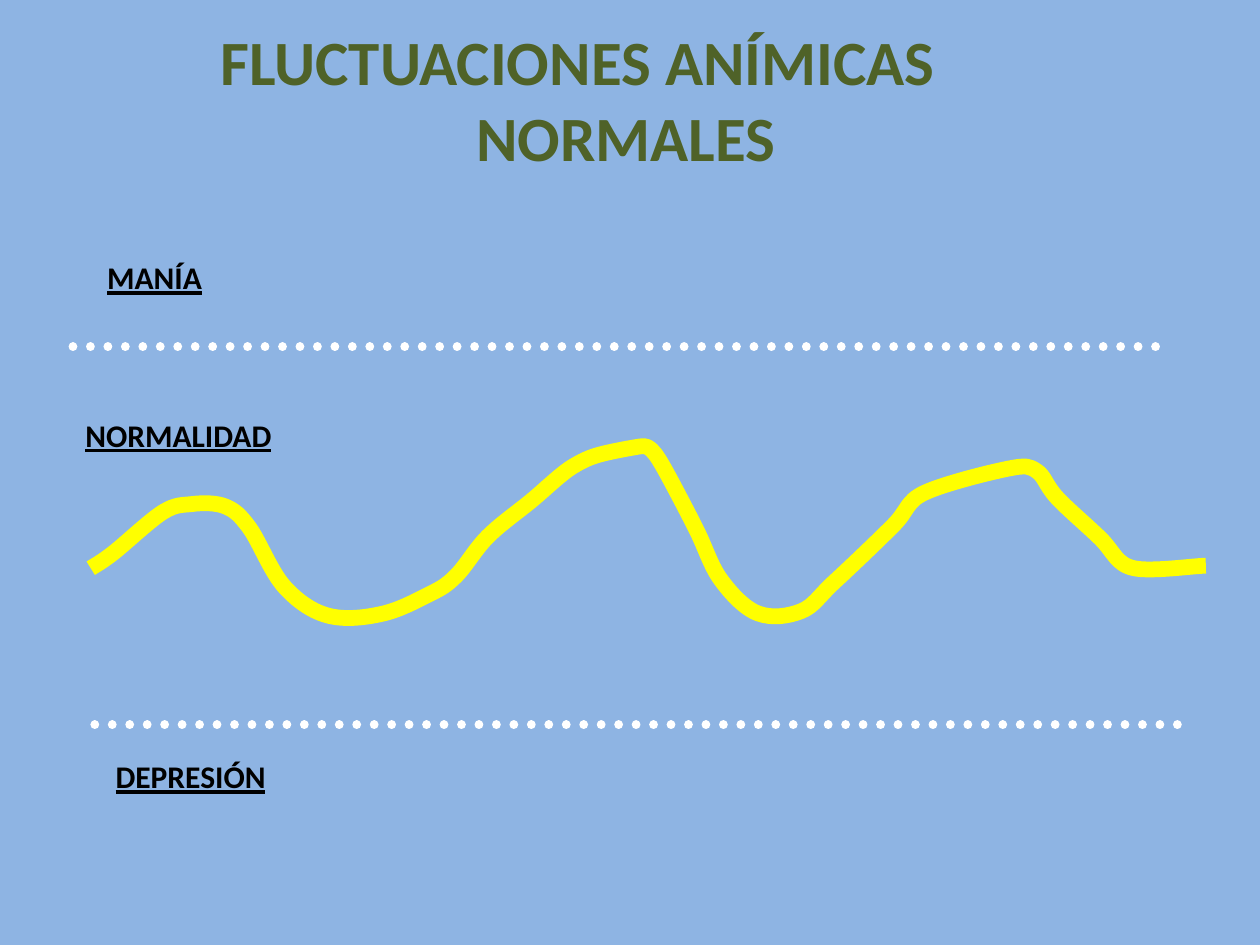
from lxml import etree
from pptx import Presentation
from pptx import util as u
from pptx.dml.color import RGBColor
from pptx.enum import dml, shapes, text
from pptx.oxml import ns

COLORS = {"sky": "8EB4E3", "olive": "4F6228", "black": "000000",
          "white": "FFFFFF", "yellow": "FFFF00"}

# Turning points of the mood curve, in hundredths of an inch
CURVE_UNIT = u.Cm(0.0254)
MOOD_CURVE = [
    (72, 451), (91, 438), (130, 406), (153, 400), (179, 402), (198, 419),
    (226, 466), (262, 489), (304, 487), (340, 472), (362, 457), (387, 426),
    (421, 398), (455, 370), (479, 360), (504, 355), (517, 357), (530, 377),
    (553, 421), (572, 460), (602, 487), (636, 485), (662, 462), (709, 417),
    (734, 391), (800, 372), (823, 374), (838, 394), (874, 428), (900, 451),
    (957, 449),
]


class SlideBuilder:
    font = "Calibri"

    def __init__(self, slide):
        self.slide = slide

    def color(self, name):
        return RGBColor.from_string(COLORS[name])

    def background(self, color):
        fill = self.slide.background.fill
        fill.solid()
        fill.fore_color.rgb = self.color(color)

    def textbox(self, words, left, top, width, height, size, color, underline=False):
        shape = self.slide.shapes.add_textbox(
            u.Cm(left), u.Cm(top), u.Cm(width), u.Cm(height))
        frame = shape.text_frame
        frame.word_wrap = True
        frame.auto_size = text.MSO_AUTO_SIZE.SHAPE_TO_FIT_TEXT
        frame.text = words
        for paragraph in frame.paragraphs:
            for run in paragraph.runs:
                run.font.name = self.font
                run.font.size = u.Pt(size)
                run.font.bold = True
                run.font.underline = underline or None
                run.font.color.rgb = self.color(color)
        return frame

    def indent(self, paragraph, distance):
        paragraph._p.get_or_add_pPr().set("marL", str(u.Cm(distance)))

    def stroke(self, shape, color, width):
        shape.line.color.rgb = self.color(color)
        shape.line.width = u.Pt(width)

    def dotted_line(self, left, right, y, color, width):
        line = self.slide.shapes.add_connector(
            shapes.MSO_CONNECTOR.STRAIGHT, u.Cm(left), u.Cm(y), u.Cm(right), u.Cm(y))
        self.stroke(line, color, width)
        line.line.dash_style = dml.MSO_LINE.ROUND_DOT
        properties = line._element.spPr
        properties.find(ns.qn("a:ln")).set("cap", "rnd")
        etree.SubElement(properties, ns.qn("a:effectLst"))

    def smooth_curve(self, points, color, width):
        # Each control lies along the line between the neighbours of its point
        steps = []
        padded = [points[0], *points, points[-1]]
        for before, start, end, after in zip(padded, padded[1:], padded[2:], padded[3:]):
            steps.append([s + (e - b) / 6 for b, s, e in zip(before, start, end)])
            steps.append([e - (a - s) / 6 for s, e, a in zip(start, end, after)])
            steps.append(end)
        builder = self.slide.shapes.build_freeform(*points[0], scale=CURVE_UNIT)
        builder.add_line_segments(steps, close=False)
        shape = builder.convert_to_shape()
        shape.shadow.inherit = False
        shape.fill.background()
        self.stroke(shape, color, width)
        properties = shape._element.spPr
        etree.SubElement(properties.find(ns.qn("a:ln")), ns.qn("a:round"))
        # Turn each three straight steps into one Bezier segment
        outline = next(properties.iter(ns.qn("a:path")))
        lines = outline.findall(ns.qn("a:lnTo"))
        for index in range(0, len(lines), 3):
            segment = etree.SubElement(outline, ns.qn("a:cubicBezTo"))
            for line in lines[index:index + 3]:
                segment.append(line[0])
                outline.remove(line)


def main():
    presentation = Presentation()
    presentation.slide_width = u.Cm(25.4)
    presentation.slide_height = u.Cm(19.05)
    builder = SlideBuilder(presentation.slides.add_slide(presentation.slide_layouts[6]))
    builder.background("sky")

    # Title, second line set in
    title = builder.textbox("FLUCTUACIONES ANÍMICAS\nNORMALES",
                            4.19, 0.33, 15.16, 3.33, 36, "olive")
    builder.indent(title.paragraphs[1], 5.16)

    # Limits of the normal range
    for left, right, y in [(1.47, 23.5, 6.99), (1.91, 23.93, 14.61)]:
        builder.dotted_line(left, right, y, "white", 5)

    # Zone labels
    for words, left, top, width in [("MANÍA", 1.91, 5.08, 3.48),
                                    ("DEPRESIÓN", 2.08, 15.14, 5.46),
                                    ("NORMALIDAD", 1.47, 8.26, 6.53)]:
        builder.textbox(words, left, top, width, 1.27, 18, "black", underline=True)

    # Mood curve
    builder.smooth_curve(MOOD_CURVE, "yellow", 9)

    presentation.save("out.pptx")


if __name__ == "__main__":
    main()
